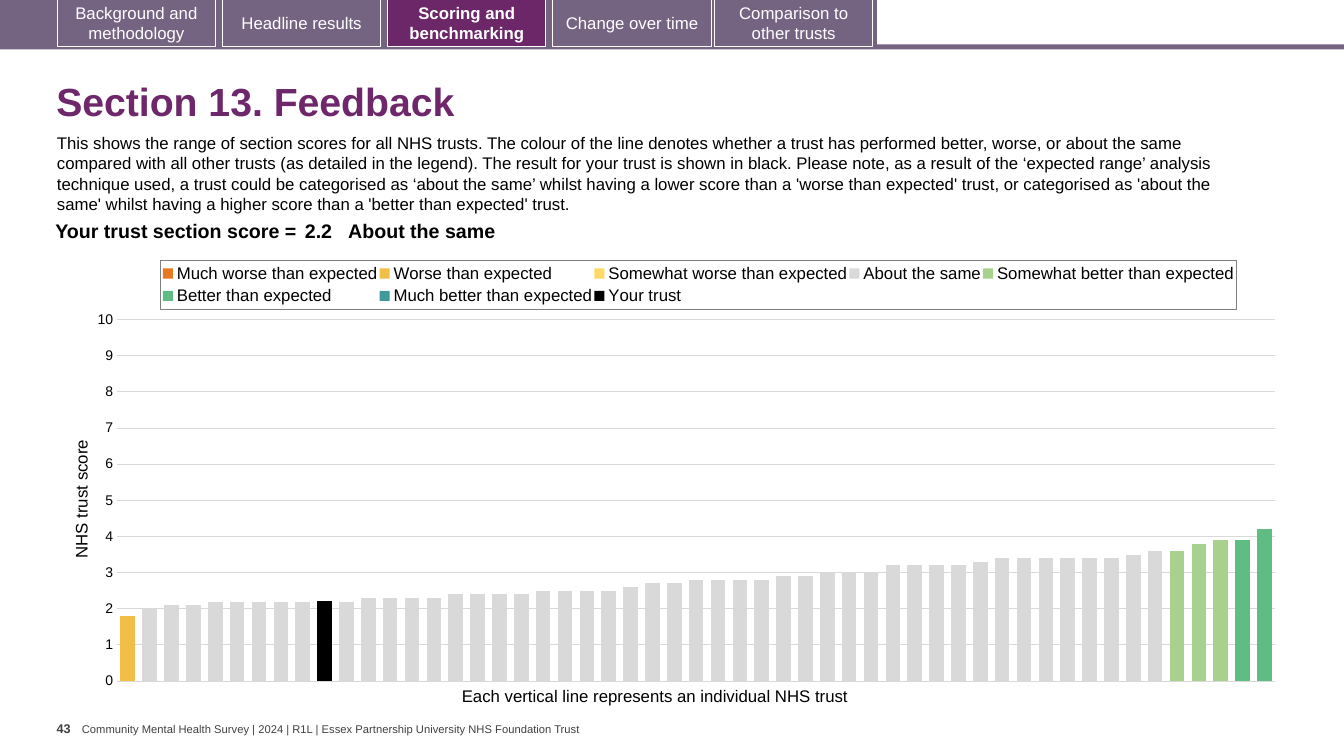
from copy import deepcopy

from pptx import Presentation, util as u
from pptx.chart import axis as axes, data
from pptx.dml.color import RGBColor
from pptx.enum import chart as ch, shapes, text
from pptx.oxml import parse_xml
from pptx.oxml.ns import nsdecls, qn

BAND, ACTIVE, BLACK, FOOTER = "756382", "6B2768", "000000", "404040"
PLAIN_TABLE = "{2D5ABB26-0587-4C30-8999-92F81FD0307C}"
TABS = ["Background and methodology", "Headline results", "Scoring and benchmarking",
        "Change over time", "Comparison to other trusts"]
TAB_LEFTS = [41, 159, 277, 395, 510.5]
INTRO = (
    "This shows the range of section scores for all NHS trusts. The colour of the line denotes "
    "whether a trust has performed better, worse, or about the same compared with all other trusts "
    "(as detailed in the legend). The result for your trust is shown in black. Please note, as a "
    "result of the ‘expected range’ analysis technique used, a trust could be categorised as "
    "‘about the same’ whilst having a lower score than a 'worse than expected' trust, or "
    "categorised as 'about the same' whilst having a higher score than a 'better than expected' trust."
)
SAME = ([2] + [2.1] * 2 + [2.2] * 7 + [2.3] * 4 + [2.4] * 4 + [2.5] * 4 + [2.6] + [2.7] * 2
        + [2.8] * 4 + [2.9] * 2 + [3] * 3 + [3.2] * 4 + [3.3] + [3.4] * 6 + [3.5, 3.6])
TRUSTS = 53
BANDS = [
    ("Much worse than expected", "E87722", 0, []),
    ("Worse than expected", "F1BE48", 0, [1.8]),
    ("Somewhat worse than expected", "FFD966", 0, []),
    ("About the same", "D9D9D9", 1, SAME),
    ("Somewhat better than expected", "A9D18E", 48, [3.6, 3.8, 3.9]),
    ("Better than expected", "5FBD83", 51, [3.9, 4.2]),
    ("Much better than expected", "419999", 0, []),
    ("Your trust", BLACK, 9, [2.21]),
]


def color(hex_string):
    return RGBColor.from_string(hex_string)


def set_font(font, size, hex_string=BLACK, bold=False):
    font.name = "Arial"
    font.size = u.Pt(size)
    font.bold = bold
    font.color.rgb = color(hex_string)


def write(frame, words, size=12, hex_string=BLACK, bold=False, align="LEFT",
          anchor="TOP", wrap=True, insets=(7.2, 3.6), spacing=None):
    frame.word_wrap = wrap
    frame.vertical_anchor = getattr(text.MSO_ANCHOR, anchor)
    frame.margin_left = frame.margin_right = u.Pt(insets[0])
    frame.margin_top = frame.margin_bottom = u.Pt(insets[1])
    paragraph = frame.paragraphs[0]
    paragraph.alignment = getattr(text.PP_ALIGN, align)
    if spacing:
        paragraph.line_spacing = spacing
    run = paragraph.add_run()
    run.text = words
    set_font(run.font, size, hex_string, bold)


def add_text(slide, box, words, **style):
    write(slide.shapes.add_textbox(*map(u.Pt, box)).text_frame, words, **style)


def add_rectangle(slide, box, fill, line=None):
    shape = slide.shapes.add_shape(shapes.MSO_SHAPE.RECTANGLE, *map(u.Pt, box))
    shape.shadow.inherit = False
    shape.fill.solid()
    shape.fill.fore_color.rgb = color(fill)
    if line:
        shape.line.color.rgb = color(line)
        shape.line.width = u.Pt(0.75)
    else:
        shape.line.fill.background()
    return shape


def add_navigation(slide, box):
    left, top, width, height = box
    add_rectangle(slide, (left, top + height - 3.6, width, 3.6), BAND)
    add_rectangle(slide, (left, top, 626.4, height - 1.4), BAND)
    for tab_left, label in zip(TAB_LEFTS, TABS):
        active = label == "Scoring and benchmarking"
        tab = add_rectangle(slide, (left + tab_left, top - 0.7, 113, height - 1.4),
                            ACTIVE if active else BAND, "FFFFFF")
        write(tab.text_frame, label, hex_string="FFFFFF", bold=active,
              align="CENTER", anchor="MIDDLE")


def add_heading(slide, box):
    left, top, width, height = box
    add_text(slide, (left, top, width, 51.8), "Section 13. Feedback", size=28,
             hex_string="6D276A", bold=True, anchor="MIDDLE", spacing=0.9)
    add_text(slide, (left + 0.5, top + 43.2, 873.4, height - 43.2), INTRO)


def add_score(slide, box):
    frame = slide.shapes.add_table(1, 3, *map(u.Pt, box))
    table = frame.table
    table.first_row = table.horz_banding = False
    table._tbl.tblPr.find(qn("a:tableStyleId")).text = PLAIN_TABLE
    entries = [("Your trust section score =", 189.4, "RIGHT", 2.9),
               ("2.2", 33.8, "LEFT", 2.9), ("About the same", 618.5, "LEFT", 0)]
    for index, (words, width, align, inset) in enumerate(entries):
        table.columns[index].width = u.Pt(width)
        cell = table.cell(0, index)
        cell.fill.background()
        cell.margin_left = cell.margin_right = u.Pt(inset)
        cell.margin_top = cell.margin_bottom = u.Pt(2.9)
        paragraph = cell.text_frame.paragraphs[0]
        paragraph.alignment = getattr(text.PP_ALIGN, align)
        run = paragraph.add_run()
        run.text = words
        set_font(run.font, 14, bold=True)


def set_layout(element, index, inner=False, **fractions):
    for layout in element.findall(qn("c:layout")):
        element.remove(layout)
    target = '<c:layoutTarget val="inner"/>' if inner else ""
    values = "".join(f'<c:{key} val="{value}"/>' for key, value in fractions.items())
    element.insert(index, parse_xml(
        f'<c:layout {nsdecls("c")}><c:manualLayout>{target}<c:xMode val="edge"/>'
        f'<c:yMode val="edge"/>{values}</c:manualLayout></c:layout>'))


def format_value_axis(axis):
    axis.minimum_scale, axis.maximum_scale, axis.major_unit = 0, 10, 1
    axis.major_tick_mark = ch.XL_TICK_MARK.NONE
    axis.format.line.fill.background()
    axis.major_gridlines.format.line.color.rgb = color("D9D9D9")
    axis.major_gridlines.format.line.width = u.Pt(0.75)
    set_font(axis.tick_labels.font, 10)
    axis.tick_labels.number_format = "0"
    axis.tick_labels.number_format_is_linked = False
    title = axis.axis_title.text_frame.paragraphs[0].add_run()
    title.text = "NHS trust score"
    set_font(title.font, 12)
    set_layout(axis.axis_title._element, 1, x=0, y=0.42)


def move_last_series_to_right_axis(plot_area):
    bars = plot_area.find(qn("c:barChart"))
    right_bars = deepcopy(bars)
    bars.remove(bars.findall(qn("c:ser"))[-1])
    for series in right_bars.findall(qn("c:ser"))[:-1]:
        right_bars.remove(series)
    bars.addnext(right_bars)
    category, value = (plot_area.find(qn(tag)) for tag in ("c:catAx", "c:valAx"))
    right_category, right_value = deepcopy(category), deepcopy(value)
    value.addnext(right_value)
    right_value.addnext(right_category)
    for element, ids in ((right_bars, "12"), (right_category, "12"), (right_value, "21")):
        links = element.findall(qn("c:axId")) + element.findall(qn("c:crossAx"))
        for link, number in zip(links, ids):
            link.set("val", number)
    right_value.find(qn("c:axPos")).set("val", "r")
    right_value.find(qn("c:crosses")).set("val", "max")
    right_axis = axes.ValueAxis(right_value)
    right_axis.has_major_gridlines = right_axis.has_title = False
    right_axis.major_tick_mark = ch.XL_TICK_MARK.OUTSIDE
    right_axis.tick_label_position = ch.XL_TICK_LABEL_POSITION.NONE


def format_legend(chart):
    chart.has_legend = True
    legend = chart.legend
    legend.position = ch.XL_LEGEND_POSITION.TOP
    legend.include_in_layout = False
    set_font(legend.font, 12)
    set_layout(legend._element, 1, x=0.076, y=0.025, w=0.878, h=0.11)
    legend._element.find(qn("c:txPr")).addprevious(parse_xml(
        f'<c:spPr {nsdecls("c", "a")}><a:ln w="9525"><a:solidFill>'
        '<a:srgbClr val="7F7F7F"/></a:solidFill></a:ln></c:spPr>'))


def add_scores_chart(slide, box):
    left, top, width, height = box
    chart_data = data.CategoryChartData()
    chart_data.categories = [str(number) for number in range(1, TRUSTS + 1)]
    for name, _, start, scores in BANDS:
        padding = TRUSTS - start - len(scores)
        chart_data.add_series(name, [None] * start + scores + [None] * padding)
    chart = slide.shapes.add_chart(ch.XL_CHART_TYPE.COLUMN_CLUSTERED,
                                   *map(u.Pt, box), chart_data).chart
    set_font(chart.font, 10)
    chart.font.name = "Calibri"
    chart.has_title = False
    plot = chart.plots[0]
    plot.gap_width, plot.overlap, plot.vary_by_categories = 50, 100, False
    for series, (_, fill, _, _) in zip(plot.series, BANDS):
        series.format.fill.solid()
        series.format.fill.fore_color.rgb = color(fill)
    chart.category_axis.visible = False
    format_value_axis(chart.value_axis)
    format_legend(chart)
    plot_area = chart._chartSpace.chart.plotArea
    set_layout(plot_area, 0, inner=True, x=0.04, y=0.158, w=0.946, h=0.808)
    move_last_series_to_right_axis(plot_area)
    add_text(slide, (left + 274.3, top + height - 11.5, 296, 21.6),
             "Each vertical line represents an individual NHS trust", wrap=False)


def add_footer(slide, box):
    left, top, width, height = box
    add_text(slide, (left, top, 18, height), "43", size=9, hex_string=FOOTER,
             bold=True, wrap=False, insets=(0, 3.6))
    add_text(slide, (left + 18, top + 4.3, width - 18, 9.4),
             "Community Mental Health Survey | 2024 | R1L | "
             "Essex Partnership University NHS Foundation Trust",
             size=8, hex_string=FOOTER, anchor="MIDDLE", wrap=False, insets=(0, 0))


def main():
    presentation = Presentation()
    presentation.slide_width, presentation.slide_height = u.Pt(960), u.Pt(540)
    slide = presentation.slides.add_slide(presentation.slide_layouts[6])
    add_navigation(slide, (0, 0, 960, 35.3))
    add_heading(slide, (33.1, 48.2, 899.3, 108.7))
    add_scores_chart(slide, (48.5, 177.8, 874.8, 319.7))
    add_score(slide, (25.5, 154.8, 841.7, 22))
    add_footer(slide, (40.5, 511.4, 378.7, 28.6))
    presentation.save("out.pptx")


if __name__ == "__main__":
    main()
